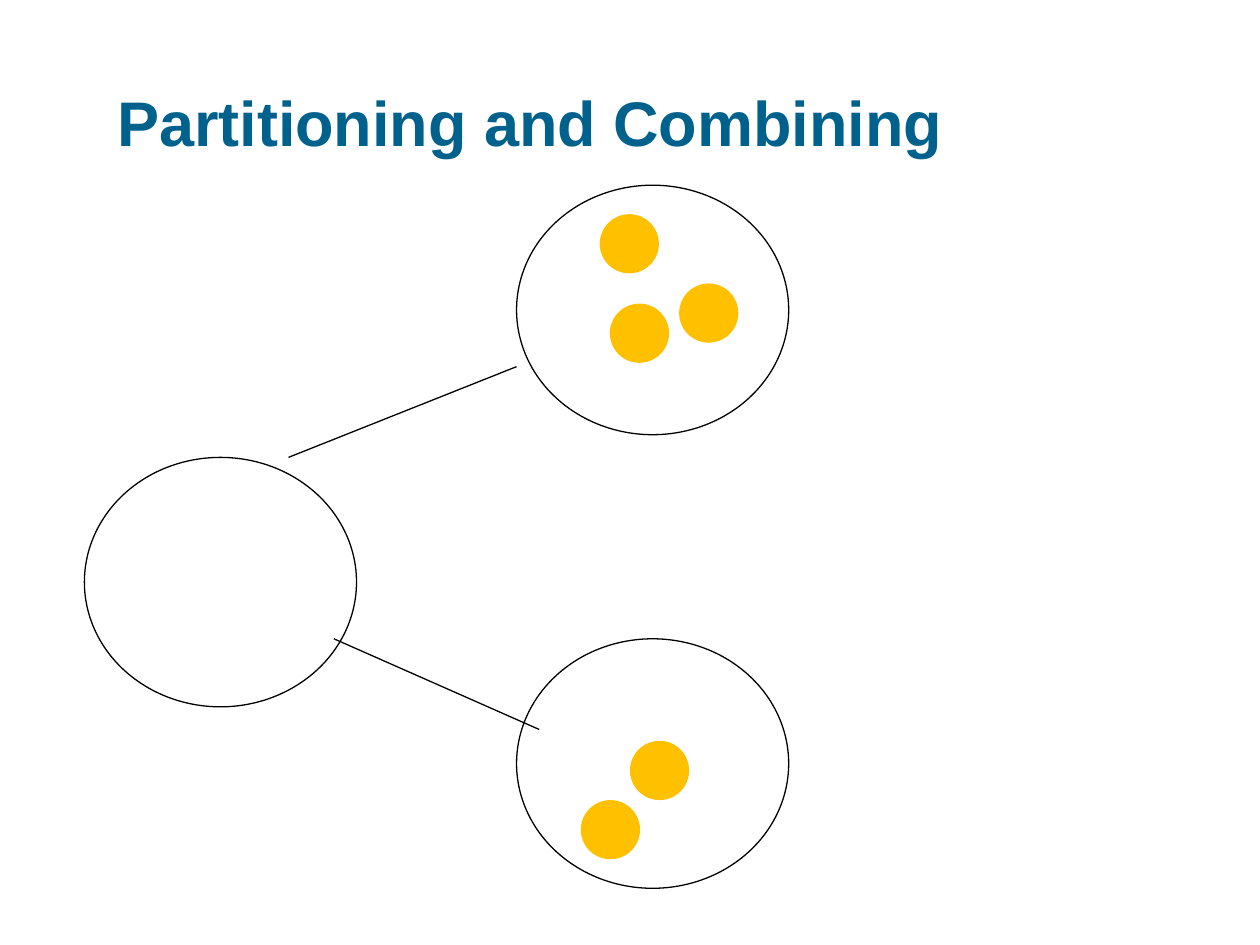
from lxml import etree
from pptx import Presentation
from pptx.dml.color import RGBColor
from pptx.enum.shapes import MSO_CONNECTOR, MSO_SHAPE
from pptx.enum.text import MSO_ANCHOR, PP_ALIGN
from pptx.oxml.ns import qn
from pptx.util import Inches, Pt

OVAL = MSO_SHAPE.OVAL
STRAIGHT = MSO_CONNECTOR.STRAIGHT
BOTTOM = MSO_ANCHOR.BOTTOM
LEFT = PP_ALIGN.LEFT

TITLE_BLUE = RGBColor(0x00, 0x62, 0x8C)
BLACK = RGBColor(0x00, 0x00, 0x00)
COUNTER_YELLOW = RGBColor(0xFF, 0xC0, 0x00)

deck = Presentation()
deck.slide_width = Inches(10)
deck.slide_height = Inches(7.5)
page = deck.slides.add_slide(deck.slide_layouts[5])


def add_oval(left, top, width, height):
    oval = page.shapes.add_shape(
        OVAL, Inches(left), Inches(top), Inches(width), Inches(height))
    oval.shadow.inherit = False
    return oval


# Title
title = page.shapes.title
title.left, title.top = Inches(0.83), Inches(0.33)
title.width, title.height = Inches(8.67), Inches(0.98)
title.text_frame.vertical_anchor = BOTTOM
title.text_frame.text = "Partitioning and Combining"
para = title.text_frame.paragraphs[0]
para.alignment = LEFT
para.font.name = "Arial"
para.font.size = Pt(36)
para.font.bold = True
para.font.color.rgb = TITLE_BLUE

# Number bond: two parts and the whole
for left, top in [(4.1, 5.07), (4.1, 1.47), (0.67, 3.63)]:
    circle = add_oval(left, top, 2.16, 1.98)
    circle.fill.background()
    circle.line.color.rgb = BLACK
    circle.line.width = Pt(0.75)

# Lines from the parts to the whole
for x1, y1, x2, y2 in [(4.28, 5.79, 2.65, 5.07), (4.1, 2.91, 2.29, 3.63)]:
    link = page.shapes.add_connector(
        STRAIGHT, Inches(x1), Inches(y1), Inches(x2), Inches(y2))
    link.line.color.rgb = BLACK
    link.line.width = Pt(0.75)
    etree.SubElement(link._element.spPr, qn("a:effectLst"))

# Counters
for left, top in [(4.84, 2.41), (4.76, 1.7), (4.61, 6.35),
                  (5.39, 2.25), (5, 5.88)]:
    counter = add_oval(left, top, 0.47, 0.47)
    counter.fill.solid()
    counter.fill.fore_color.rgb = COUNTER_YELLOW
    counter.line.fill.background()

deck.save("out.pptx")
